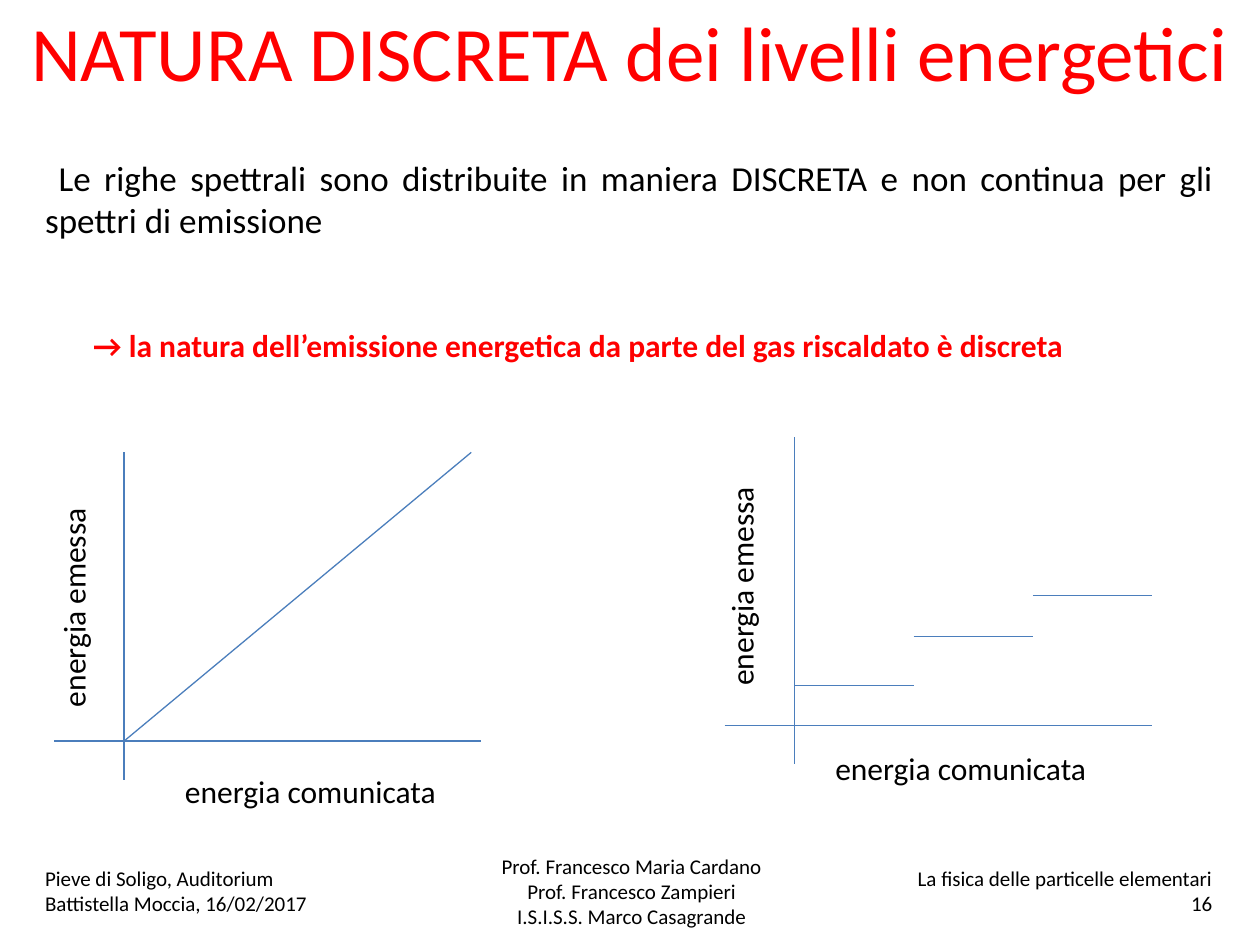
from lxml import etree
from pptx import Presentation
from pptx.dml.color import RGBColor
from pptx.enum.shapes import MSO_CONNECTOR
from pptx.enum.text import MSO_ANCHOR, PP_ALIGN
from pptx.oxml.ns import qn
from pptx.util import Cm, Pt

STRAIGHT = MSO_CONNECTOR.STRAIGHT
TOP, MIDDLE = MSO_ANCHOR.TOP, MSO_ANCHOR.MIDDLE
LEFT, CENTER, RIGHT, JUSTIFY = PP_ALIGN.LEFT, PP_ALIGN.CENTER, PP_ALIGN.RIGHT, PP_ALIGN.JUSTIFY
BLACK, RED, BLUE = "000000", "FF0000", "4B7EBC"


def color(code):
    """Turn a hex string into a colour."""
    return RGBColor.from_string(code)


def label(slide, box, lines, size=18, ink=BLACK, align=LEFT, anchor=TOP, bold=False):
    """Place a wrapped text box with one paragraph per line."""
    shape = slide.shapes.add_textbox(*map(Cm, box))
    frame = shape.text_frame
    frame.word_wrap = True
    frame.vertical_anchor = anchor
    frame.text = "\n".join(lines)
    for para in frame.paragraphs:
        para.alignment = align
        font = para.font
        font.name, font.size, font.bold = "Calibri", Pt(size), bold
        font.color.rgb = color(ink)
    return shape


def stroke(slide, x1, y1, x2, y2):
    """Draw one thin line without a shadow."""
    line = slide.shapes.add_connector(STRAIGHT, *map(Cm, (x1, y1, x2, y2)))
    line.line.color.rgb = color(BLUE)
    line.line.width = Pt(0.75)
    etree.SubElement(line._element.spPr, qn("a:effectLst"))


def graph(slide, box, curve, side, foot):
    """Draw axes, curve and axis names, all relative to the box."""
    left, top, width, height = box
    x, y = left + 1.41, top + 5.82
    stroke(slide, x, top, x, top + height)
    stroke(slide, left, y, left + width, y)
    for x1, y1, x2, y2 in curve:
        stroke(slide, x + x1, y - y1, x + x2, y - y2)
    name = label(slide, (left + side[0], top + side[1], 6.81, 1.02), ["energia emessa"])
    name.rotation = 270
    label(slide, (left + foot[0], top + foot[1], 6.81, 1.02), ["energia comunicata"])


def head(slide, box):
    """Place the title, the statement and its consequence."""
    left, top, width, height = box
    label(slide, (left, top, width, 2.21), ["NATURA DISCRETA dei livelli energetici"],
          44, RED, CENTER, MIDDLE)
    label(slide, (left + 0.66, top + 3.12, width - 1.35, 1.96),
          [" Le righe spettrali sono distribuite in maniera DISCRETA e non continua "
           "per gli spettri di emissione"], 20, align=JUSTIFY)
    label(slide, (left + 1.63, top + height - 1.02, width - 3.2, 1.02),
          ["→ la natura dell’emissione energetica da parte del gas riscaldato è discreta"],
          ink=RED, bold=True)


def footer(slide, box):
    """Place the venue, the authors and the talk with its page number."""
    left, top, width, height = box
    parts = [
        (0, 5.84, LEFT, ["Pieve di Soligo, Auditorium Battistella Moccia, 16/02/2017"]),
        (8.05, 8.05, CENTER, ["Prof. Francesco Maria Cardano", "Prof. Francesco Zampieri",
                              "I.S.I.S.S. Marco Casagrande"]),
        (width - 8, 8, RIGHT, ["La fisica delle particelle elementari", "16"]),
    ]
    for x, wide, align, lines in parts:
        label(slide, (left + x, top, wide, height), lines, 12, align=align, anchor=MIDDLE)


def main():
    """Build the slide and save it."""
    deck = Presentation()
    deck.slide_width, deck.slide_height = Cm(25.4), Cm(19.05)
    slide = deck.slides.add_slide(deck.slide_layouts[6])
    head(slide, (0, -0.08, 25.4, 7.55))
    footer(slide, (0.66, 17.2, 24.03, 1.52))
    slope = [(0, 0, 7, 5.82)]
    steps = [(2.4 * i, rise, 2.4 * (i + 1), rise) for i, rise in enumerate((0.81, 1.8, 2.62))]
    graph(slide, (1.09, 9.12, 8.61, 6.6), slope, (-3.02, 1.47), (2.39, 6.32))
    graph(slide, (14.61, 8.81, 8.61, 6.6), steps, (-3.07, 1.35), (1.98, 6.17))
    deck.save("out.pptx")


if __name__ == "__main__":
    main()
